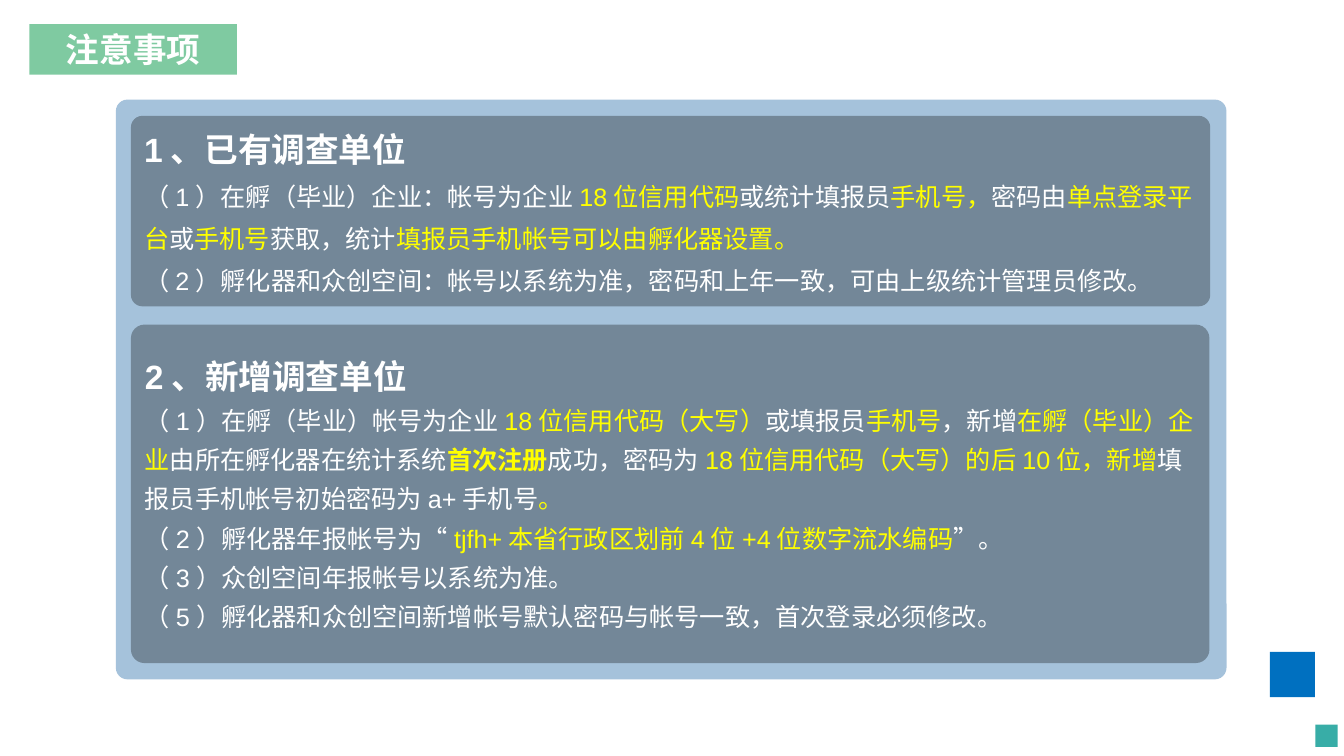
from dataclasses import dataclass

from lxml import etree
from pptx import Presentation
from pptx import util as u
from pptx.dml.color import RGBColor
from pptx.enum import shapes, text
from pptx.oxml import ns

WHITE = RGBColor(0xFF, 0xFF, 0xFF)
YELLOW = RGBColor(0xFF, 0xFF, 0x00)
BLACK = RGBColor(0x00, 0x00, 0x00)
GREEN = RGBColor(0x00, 0x96, 0x44)
STEEL = RGBColor(0x20, 0x67, 0xA5)
BLUE = RGBColor(0x00, 0x70, 0xC0)
TEAL = RGBColor(0x38, 0xAD, 0xA7)
ROUNDED = shapes.MSO_SHAPE.ROUNDED_RECTANGLE
SQUARE = shapes.MSO_SHAPE.RECTANGLE


@dataclass(frozen=True)
class Span:
    text: str
    color: RGBColor = WHITE
    size: float = 18
    bold: bool = False


@dataclass(frozen=True)
class Line:
    spans: tuple[Span, ...]
    spacing: float | None = None


@dataclass(frozen=True)
class Block:
    left: float
    top: float
    width: float
    height: float
    color: RGBColor
    opacity: int = 100
    kind: shapes.MSO_SHAPE = ROUNDED
    corner: float = 0
    lines: tuple[Line, ...] = ()


def hot(words: str, bold: bool = False) -> Span:
    return Span(words, YELLOW, bold=bold)


def heading(words: str) -> Span:
    return Span(words, size=24, bold=True)


EXISTING_UNITS = (
    Line((heading("1、已有调查单位"),), 30),
    Line((
        Span("（1）在孵（毕业）企业：帐号为企业"), hot("18位信用代码"),
        Span("或统计填报员"), hot("手机号，"), Span("密码由"),
        hot("单点登录平台"), Span("或"), hot("手机号"),
        Span("获取，统计"), hot("填报员手机帐号可以由孵化器设置。"),
    ), 30),
    Line((Span("（2）孵化器和众创空间：帐号以系统为准，密码和上年一致，可由上级统计管理员修改。"),), 30),
)
NEW_UNITS = (
    Line((heading("2、新增调查单位"),)),
    Line((
        Span("（1）在孵（毕业）帐号为企业"), hot("18位信用代码（大写）"),
        Span("或填报员"), hot("手机号"), Span("，新增"),
        hot("在孵（毕业）企业"), Span("由所在孵化器在统计系统"),
        hot("首次注册", bold=True), Span("成功，密码为"),
        hot("18位信用代码（大写）的后10位，新增"),
        Span("填报员手机帐号初始密码为a+手机号"), hot("。"),
    ), 28),
    Line((
        Span("（2）孵化器年报帐号为“"),
        hot("tjfh+本省行政区划前4位+4位数字流水编码"), Span("”。"),
    ), 28),
    Line((Span("（3）众创空间年报帐号以系统为准。"),), 28),
    Line((Span("（5）孵化器和众创空间新增帐号默认密码与帐号一致，首次登录必须修改。"),), 28),
)
BLOCKS = (
    Block(32, 16.43, 1.14, 1.14, BLUE, kind=SQUARE),
    Block(33.15, 18.26, 0.56, 0.56, TEAL, kind=SQUARE),
    Block(2.92, 2.51, 27.99, 14.61, STEEL, 40, corner=0.02),
    Block(3.3, 8.18, 27.18, 8.53, BLACK, 30, corner=0.04, lines=NEW_UNITS),
    Block(3.3, 2.92, 27.2, 4.8, BLACK, 30, corner=0.06, lines=EXISTING_UNITS),
)
BADGE = Block(0.74, 0.61, 5.23, 1.27, GREEN, 50, lines=(Line((heading("注意事项"),)),))


def paint(shape, color: RGBColor, opacity: int) -> None:
    shape.fill.solid()
    shape.fill.fore_color.rgb = color
    shape.line.fill.background()
    if opacity < 100:
        tint = shape.element.spPr.find(".//" + ns.qn("a:srgbClr"))
        etree.SubElement(tint, ns.qn("a:alpha"), val=str(opacity * 1000))


def write(shape, lines: tuple[Line, ...], align: text.PP_ALIGN) -> None:
    frame = shape.text_frame
    frame.word_wrap = True
    frame.auto_size = text.MSO_AUTO_SIZE.NONE
    frame.vertical_anchor = text.MSO_ANCHOR.MIDDLE
    for index, line in enumerate(lines):
        para = frame.add_paragraph() if index else frame.paragraphs[0]
        para.alignment = align
        para.line_spacing = u.Pt(line.spacing) if line.spacing else 1.0
        for span in line.spans:
            run = para.add_run()
            run.text = span.text
            run.font.name = "Arial"
            run.font.size = u.Pt(span.size)
            run.font.bold = span.bold
            run.font.color.rgb = span.color


def add_block(page, block: Block) -> None:
    box = page.shapes.add_shape(block.kind, u.Cm(block.left), u.Cm(block.top),
                                u.Cm(block.width), u.Cm(block.height))
    box.shadow.inherit = False
    if block.corner:
        box.adjustments[0] = block.corner
    paint(box, block.color, block.opacity)
    if block.lines:
        write(box, block.lines, text.PP_ALIGN.LEFT)


def format_title(title, badge: Block) -> None:
    title.left, title.top = u.Cm(badge.left), u.Cm(badge.top)
    title.width, title.height = u.Cm(badge.width), u.Cm(badge.height)
    outline = etree.SubElement(title.element.spPr, ns.qn("a:prstGeom"), prst="roundRect")
    etree.SubElement(outline, ns.qn("a:avLst"))
    paint(title, badge.color, badge.opacity)
    write(title, badge.lines, text.PP_ALIGN.CENTER)


def main() -> None:
    deck = Presentation()
    deck.slide_width, deck.slide_height = u.Cm(33.87), u.Cm(19.05)
    page = deck.slides.add_slide(deck.slide_layouts.get_by_name("Title Only"))
    for block in BLOCKS:
        add_block(page, block)
    format_title(page.shapes.title, BADGE)
    deck.save("out.pptx")


if __name__ == "__main__":
    main()
